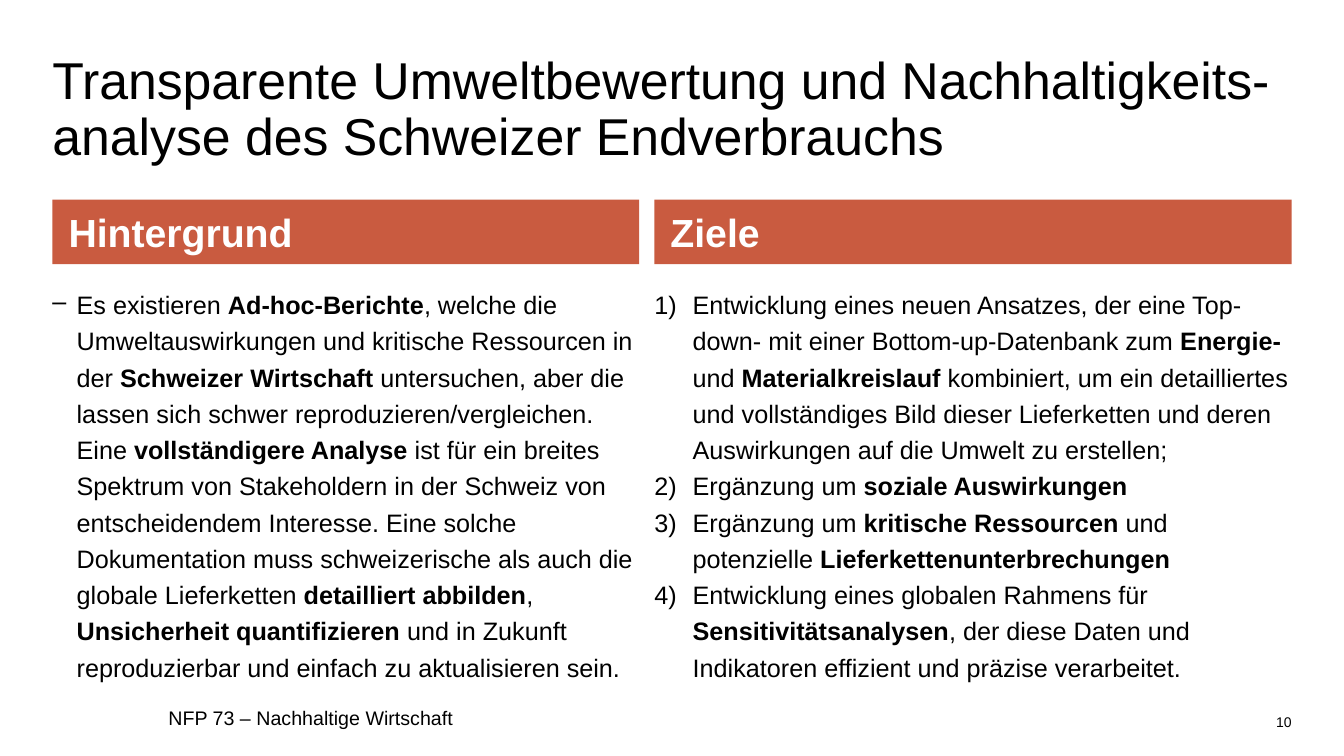
import pptx
import pptx.dml.color
import pptx.enum.shapes
import pptx.enum.text
import pptx.oxml.ns
import pptx.util
from lxml import etree

Inches = pptx.util.Inches
Pt = pptx.util.Pt
ANCHOR = pptx.enum.text.MSO_ANCHOR
ALIGN = pptx.enum.text.PP_ALIGN


def rgb(value):
    return pptx.dml.color.RGBColor.from_string(value)


class SlideBuilder:
    FONT = "Arial"
    TEXT = "000000"
    ACCENT = "C95B40"
    ON_ACCENT = "FFFFFF"

    def __init__(self, slide):
        self.slide = slide

    def _frame(self, sp, anchor, insets=(0, 0, 0, 0)):
        tf = sp.text_frame
        tf.word_wrap = True
        tf.vertical_anchor = anchor
        tf.margin_left, tf.margin_top, tf.margin_right, tf.margin_bottom = map(Inches, insets)
        return tf

    def _style(self, r, size, color, bold=False):
        r.font.name = self.FONT
        r.font.size = Pt(size)
        r.font.bold = bold
        r.font.color.rgb = rgb(color)

    def text(self, box, text, size, anchor=ANCHOR.TOP, align=ALIGN.LEFT, spacing=1.0):
        sp = self.slide.shapes.add_textbox(*map(Inches, box))
        tf = self._frame(sp, anchor)
        tf.text = text
        p = tf.paragraphs[0]
        p.alignment = align
        p.line_spacing = spacing
        self._style(p.runs[0], size, self.TEXT)

    def header(self, box, text):
        rect = pptx.enum.shapes.MSO_SHAPE.RECTANGLE
        sp = self.slide.shapes.add_shape(rect, *map(Inches, box))
        sp.shadow.inherit = False
        sp.fill.solid()
        sp.fill.fore_color.rgb = rgb(self.ACCENT)
        sp.line.fill.background()
        tf = self._frame(sp, ANCHOR.MIDDLE, (0.16, 0, 0.08, 0))
        tf.text = text
        p = tf.paragraphs[0]
        p.alignment = ALIGN.LEFT
        self._style(p.runs[0], 28, self.ON_ACCENT, bold=True)

    def bullets(self, box, items, indent, tag, **marker):
        """Add a list; **...** marks bold text, tag and marker give the bullet element."""
        sp = self.slide.shapes.add_textbox(*map(Inches, box))
        tf = self._frame(sp, ANCHOR.TOP)
        for i, item in enumerate(items):
            p = tf.add_paragraph() if i else tf.paragraphs[0]
            p.line_spacing = 1.2
            pPr = p._p.get_or_add_pPr()
            pPr.set("marL", str(Inches(indent)))
            pPr.set("indent", str(-Inches(indent)))
            etree.SubElement(pPr, pptx.oxml.ns.qn(tag), **marker)
            for j, part in enumerate(item.split("**")):
                if part:
                    r = p.add_run()
                    r.text = part
                    self._style(r, 18, self.TEXT, bold=j % 2 == 1)


BACKGROUND = [
    "Es existieren **Ad-hoc-Berichte**, welche die Umweltauswirkungen und kritische "
    "Ressourcen in der **Schweizer Wirtschaft** untersuchen, aber die lassen sich schwer "
    "reproduzieren/vergleichen. Eine **vollständigere Analyse** ist für ein breites Spektrum "
    "von Stakeholdern in der Schweiz von entscheidendem Interesse. Eine solche Dokumentation "
    "muss schweizerische als auch die globale Lieferketten **detailliert abbilden**, "
    "**Unsicherheit quantifizieren** und in Zukunft reproduzierbar und einfach zu "
    "aktualisieren sein.",
]
GOALS = [
    "Entwicklung eines neuen Ansatzes, der eine Top-down- mit einer Bottom-up-Datenbank zum "
    "**Energie-** und **Materialkreislauf** kombiniert, um ein detailliertes und vollständiges "
    "Bild dieser Lieferketten und deren Auswirkungen auf die Umwelt zu erstellen;",
    "Ergänzung um **soziale Auswirkungen**",
    "Ergänzung um **kritische Ressourcen** und potenzielle **Lieferkettenunterbrechungen**",
    "Entwicklung eines globalen Rahmens für **Sensitivitätsanalysen**, der diese Daten und "
    "Indikatoren effizient und präzise verarbeitet.",
]


def main():
    prs = pptx.Presentation()
    prs.slide_width = Inches(13.33)
    prs.slide_height = Inches(7.5)
    s = SlideBuilder(prs.slides.add_slide(prs.slide_layouts[6]))

    s.text((0.52, 0.54, 12.28, 1.12),
           "Transparente Umweltbewertung und Nachhaltigkeits-analyse des Schweizer Endverbrauchs",
           37, spacing=0.9)

    columns = [
        (0.52, 5.82, "Hintergrund", BACKGROUND, 0.24, "a:buChar", {"char": "–"}),
        (6.49, 6.32, "Ziele", GOALS, 0.38, "a:buAutoNum", {"type": "arabicParenR"}),
    ]
    for left, width, heading, items, indent, tag, marker in columns:
        s.header((left, 1.98, width, 0.64), heading)
        s.bullets((left, 2.81, width, 3.78), items, indent, tag, **marker)

    s.text((1.67, 6.98, 4.5, 0.28), "NFP 73 – Nachhaltige Wirtschaft", 14, anchor=ANCHOR.MIDDLE)
    s.text((9.03, 7.08, 3.78, 0.2), "10", 10, align=ALIGN.RIGHT)

    prs.save("out.pptx")


if __name__ == "__main__":
    main()
